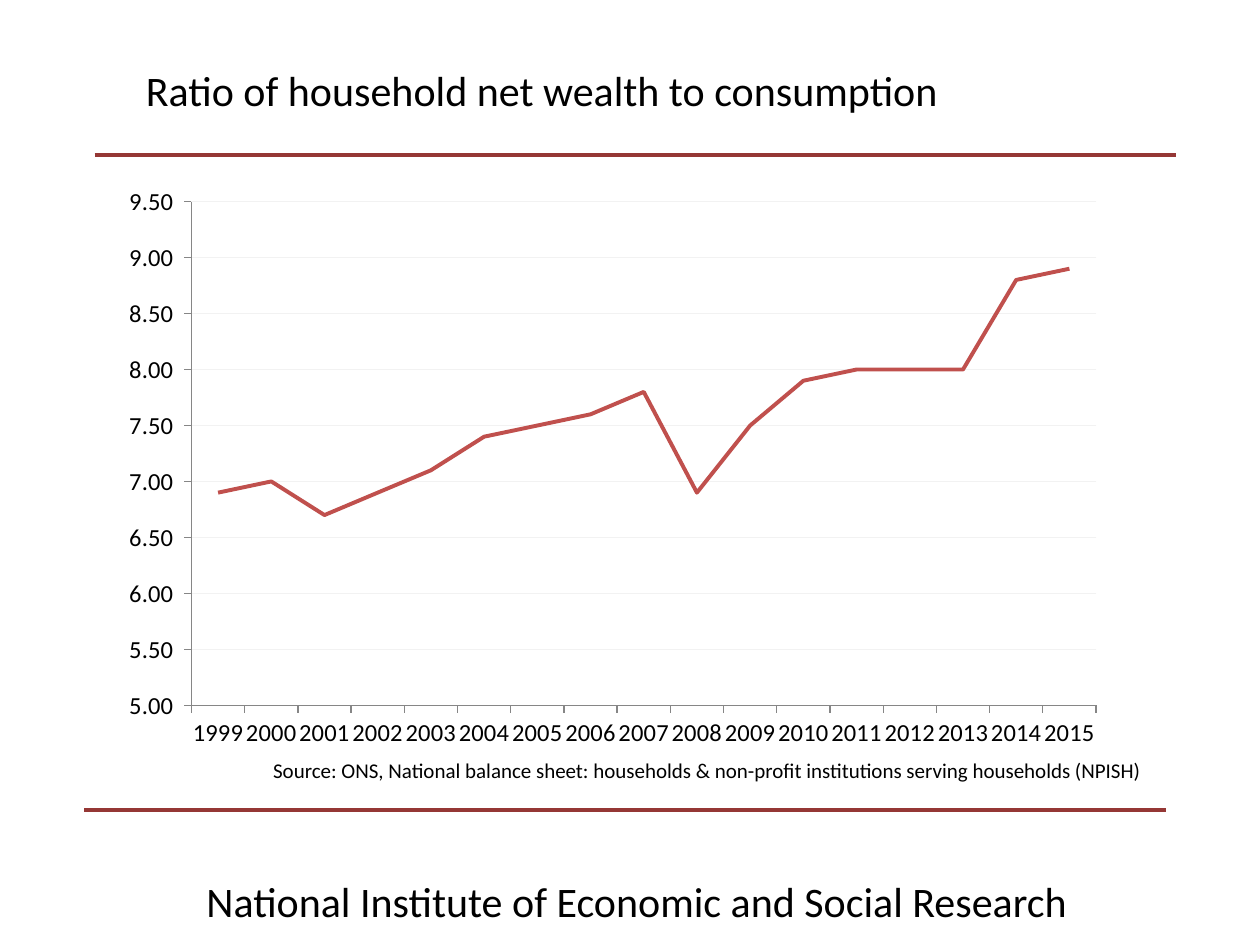
from lxml import etree
from pptx import Presentation
from pptx.chart.data import CategoryChartData
from pptx.dml.color import RGBColor
from pptx.enum.chart import XL_CHART_TYPE, XL_MARKER_STYLE, XL_TICK_MARK
from pptx.enum.shapes import MSO_CONNECTOR
from pptx.enum.text import MSO_ANCHOR, PP_ALIGN
from pptx.oxml import parse_xml
from pptx.oxml.ns import nsdecls, qn
from pptx.util import Inches, Pt

LINE = XL_CHART_TYPE.LINE
NO_MARK = XL_MARKER_STYLE.NONE
OUT, NO_TICK = XL_TICK_MARK.OUTSIDE, XL_TICK_MARK.NONE
STRAIGHT = MSO_CONNECTOR.STRAIGHT
TOP = MSO_ANCHOR.TOP
LEFT, RIGHT = PP_ALIGN.LEFT, PP_ALIGN.RIGHT
FONT = "Calibri"


def color(code):
    return RGBColor.from_string(code)


def add_text(text, left, top, width, height, size=24, align=LEFT):
    box = slide.shapes.add_textbox(
        Inches(left), Inches(top), Inches(width), Inches(height))
    frame = box.text_frame
    frame.word_wrap = True
    frame.vertical_anchor = TOP
    para = frame.paragraphs[0]
    para.alignment = align
    run = para.add_run()
    run.text = text
    run.font.name = FONT
    run.font.size = Pt(size)
    run.font.color.rgb = color("000000")


prs = Presentation()
prs.slide_width, prs.slide_height = Inches(10), Inches(7.5)
slide = prs.slides.add_slide(prs.slide_layouts[6])

# Rules above and below the chart
for left, top in [(0.75, 1.23), (0.67, 6.43)]:
    rule = slide.shapes.add_connector(
        STRAIGHT, Inches(left), Inches(top), Inches(left + 8.58), Inches(top))
    rule.line.color.rgb = color("953735")
    rule.line.width = Pt(2.25)
    etree.SubElement(rule._element.spPr, qn("a:effectLst"))

# Institute name
add_text("National Institute of Economic and Social Research",
         1.54, 6.9, 7.95, 0.4)

# Wealth ratio by year
data = CategoryChartData(number_format="0.0")
data.categories = [str(year) for year in range(1999, 2016)]
data.add_series("Series 1", [
    6.9, 7, 6.7, 6.9, 7.1, 7.4, 7.5, 7.6, 7.8,
    6.9, 7.5, 7.9, 8, 8, 8, 8.8, 8.9])
wide, high = 8.03, 4.65
chart = slide.shapes.add_chart(
    LINE, Inches(0.83), Inches(1.39), Inches(wide), Inches(high), data).chart
chart.has_legend = False
chart.has_title = False
chart.font.name = FONT
chart.font.size = Pt(14)
chart.font.color.rgb = color("000000")

plot = chart.plots[0]
plot.vary_by_categories = False
ratio = plot.series[0]
ratio.smooth = False
ratio.marker.style = NO_MARK
ratio.format.line.color.rgb = color("C0504D")
ratio.format.line.width = Pt(2.25)

# Axes and grid
years, scale = chart.category_axis, chart.value_axis
for axis in (years, scale):
    axis.major_tick_mark = OUT
    axis.minor_tick_mark = NO_TICK
    axis.format.line.color.rgb = color("868686")
    axis.format.line.width = Pt(0.75)
years.has_major_gridlines = False
scale.minimum_scale, scale.maximum_scale = 5, 9.5
scale.major_unit = 0.5
scale.tick_labels.number_format = r"_(* #,##0.00_);_(* \(#,##0.00\)"
scale.tick_labels.number_format_is_linked = False
scale.has_major_gridlines = True
grid = scale.major_gridlines.format.line
grid.color.rgb = color("F2F2F2")
grid.width = Pt(0.75)

# Fixed place for the plot inside the chart, in inches over the chart size
area = chart._chartSpace.chart.plotArea
for old in area.findall(qn("c:layout")):
    area.remove(old)
area.insert(0, parse_xml(
    f'<c:layout {nsdecls("c")}><c:manualLayout>'
    '<c:layoutTarget val="inner"/>'
    '<c:xMode val="edge"/><c:yMode val="edge"/>'
    f'<c:x val="{0.69 / wide}"/><c:y val="{0.21 / high}"/>'
    f'<c:w val="{7.18 / wide}"/><c:h val="{4 / high}"/>'
    '</c:manualLayout></c:layout>'))

# Source note and title
add_text("Source: ONS, National balance sheet: households & non-profit "
         "institutions serving households (NPISH)",
         0.03, 5.96, 9.13, 0.3, size=12, align=RIGHT)
add_text("Ratio of household net wealth to consumption",
         1.06, 0.46, 8.03, 0.5)

prs.save("out.pptx")
